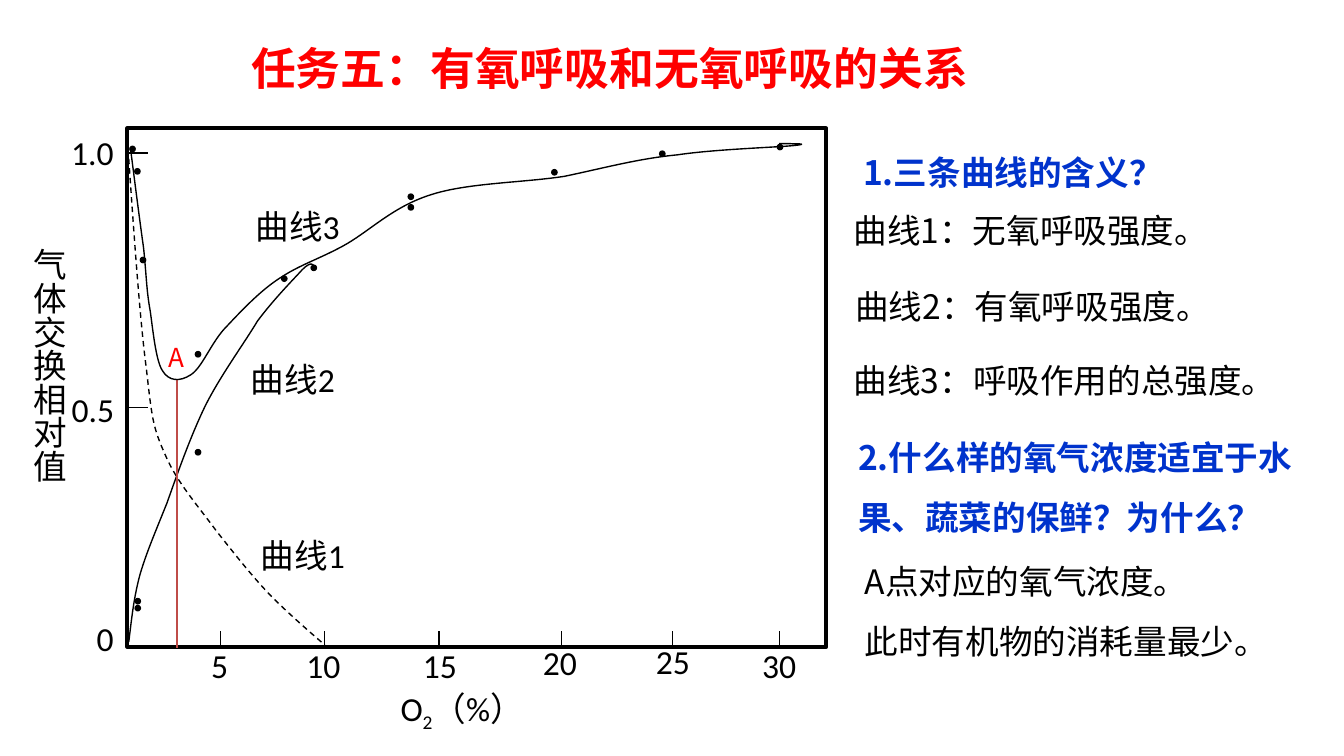
"""Build a slide on aerobic and anaerobic respiration against oxygen level."""
from lxml import etree
from pptx import Presentation
from pptx.dml.color import RGBColor
from pptx.enum import dml, shapes, text
from pptx.oxml.ns import qn
from pptx.util import Pt

BLACK = RGBColor(0, 0, 0)
RED = RGBColor(0xFF, 0, 0)
BLUE = RGBColor(0, 0x33, 0xCC)
MARKER = RGBColor(0xBF, 0x4C, 0x48)
LATIN, CJK = "Calibri", "Noto Sans CJK SC"

FRAME = (68.2, 68.8, 374.5, 277.8)
Y_TICKS = [82, 218.2]
Y_LABELS = [("1.0", 31, 67), ("0.5", 31.3, 205), ("0", 44.7, 327.5)]
X_AXIS = [("5", 118, 106, 342), ("10", 174, 157, 342), ("15", 235.2, 219.5, 342),
          ("20", 300.7, 283.7, 340.5), ("25", 360.2, 344.2, 340), ("30", 417.5, 401.2, 341.8)]
CURVE_LABELS = [("曲线1", 132.6, 283), ("曲线2", 127.2, 188.5), ("曲线3", 129.8, 106.5)]
DOTS = [(69.2, 78), (74.8, 137.5), (72, 320.3), (72, 324), (71.8, 90), (104.3, 240.5),
        (104.3, 188), (150.5, 147.5), (166.3, 141.7), (218.3, 109.3), (218.3, 103.6),
        (295.2, 90.5), (353, 80.6), (416, 77)]
ANAEROBIC = [
    (69, 85), (72, 128), (75, 171.5), (78.5, 198), (81.5, 224.5), (82, 229),
    (88.5, 243.5), (94.5, 258), (106.5, 271.5), (116, 284.5), (125.5, 296.5),
    (134.5, 308), (144, 318), (154, 328.5), (174, 345.5), (174, 345.5)]
AEROBIC = [
    (69, 344), (70.5, 332.5), (71.5, 321), (75, 308), (78.5, 296), (83.5, 284.5),
    (89.5, 269.5), (95, 254), (102, 234), (110, 217.5), (118, 201.5),
    (130.5, 184.5), (138, 172), (147, 160), (157, 150), (162, 144.5),
    (167, 139.5), (168, 142), (168.5, 143)]
TOTAL = [
    (70, 80), (72.5, 99.5), (75, 119), (77, 133), (78.5, 147.5), (78.5, 155.5),
    (80.5, 166.5), (82, 177), (83.5, 193), (87, 198.5), (90.5, 204.5),
    (96.5, 204.5), (102, 201), (108, 197.5), (112.5, 185), (120, 176.5),
    (128, 168), (139, 156), (150, 149), (160.5, 142), (170.5, 139),
    (183.5, 132), (197.5, 124.5), (210, 111), (230.5, 104.5), (250, 98),
    (280, 98), (302.5, 94.5), (324, 90), (342, 85), (363, 83), (383, 80),
    (416, 79), (425.5, 78), (435, 77), (426, 77), (417.5, 77)]
NOTES = [
    (["1.三条曲线的含义？"], 457.4, 69.6, 351.5, 34.5, BLUE),
    (["曲线1：无氧呼吸强度。"], 452.3, 98.9, 355, 38.2, BLACK),
    (["曲线2：有氧呼吸强度。"], 453.2, 139.6, 350, 38.2, BLACK),
    (["曲线3：呼吸作用的总强度。"], 452.4, 179.1, 388, 38.2, BLACK),
    (["2.什么样的氧气浓度适宜于水果、蔬菜的保鲜？为什么？"], 454.7, 220.2, 250.5, 70.5, BLUE),
    (["A点对应的氧气浓度。", "此时有机物的消耗量最少。"], 458.2, 286.8, 301, 70.5, BLACK)]


def add_text(s, lines, x, y, w, h, size=18, font=LATIN, color=BLACK, bold=False,
             inset=(7.2, 3.6), anchor=text.MSO_ANCHOR.TOP, spacing=1.0):
    """Add a text box with one paragraph per line and return its frame."""
    tf = s.shapes.add_textbox(Pt(x), Pt(y), Pt(w), Pt(h)).text_frame
    tf.word_wrap = True
    tf.auto_size = text.MSO_AUTO_SIZE.SHAPE_TO_FIT_TEXT
    tf.vertical_anchor = anchor
    tf.margin_left = tf.margin_right = Pt(inset[0])
    tf.margin_top = tf.margin_bottom = Pt(inset[1])
    tf.text = "\n".join(lines)
    for p in tf.paragraphs:
        p.line_spacing = spacing
        p.font.size, p.font.name, p.font.bold = Pt(size), font, bold
        p.font.color.rgb = color
    return tf


def add_line(s, x1, y1, x2, y2, color=BLACK, width=0.75):
    """Add a straight line without a shadow."""
    c = s.shapes.add_connector(shapes.MSO_CONNECTOR.STRAIGHT, Pt(x1), Pt(y1), Pt(x2), Pt(y2))
    c.line.color.rgb, c.line.width = color, Pt(width)
    etree.SubElement(c._element.spPr, qn("a:effectLst"))


def add_dot(s, x, y, size=3.6):
    """Add a black data point."""
    sp = s.shapes.add_shape(shapes.MSO_SHAPE.OVAL, Pt(x), Pt(y), Pt(size), Pt(size))
    sp.shadow.inherit = False
    sp.fill.solid()
    sp.fill.fore_color.rgb = BLACK
    sp.line.fill.background()


def add_curve(s, points, dash=None):
    """Add an open curve, each three points after the first making a cubic Bézier."""
    first, *rest = [(Pt(x), Pt(y)) for x, y in points]
    fb = s.shapes.build_freeform(*first)
    fb.add_line_segments(rest, close=False)
    sp = fb.convert_to_shape()
    segments = list(sp._element.iter(qn("a:lnTo")))
    for i in range(0, len(segments), 3):
        bez = etree.Element(qn("a:cubicBezTo"))
        segments[i].addprevious(bez)
        for seg in segments[i:i + 3]:
            bez.append(seg[0])
            seg.getparent().remove(seg)
    sp.shadow.inherit = False
    sp.fill.background()
    sp.line.color.rgb, sp.line.width = BLACK, Pt(0.75)
    if dash:
        sp.line.dash_style = dash


def add_axes(s):
    """Add the plot frame, ticks, tick labels and axis titles."""
    x, y, w, h = FRAME
    sp = s.shapes.add_shape(shapes.MSO_SHAPE.RECTANGLE, *map(Pt, FRAME))
    sp.shadow.inherit = False
    sp.fill.background()
    sp.line.color.rgb, sp.line.width = BLACK, Pt(2)
    for tick in Y_TICKS:
        add_line(s, x + 11, tick, x, tick)
    for label, left, top in Y_LABELS:
        add_text(s, [label], left, top, 54.5, 29)
    for label, tick, left, top in X_AXIS:
        add_line(s, tick, y + h, tick, y + h - 8.5)
        add_text(s, [label], left, top, 54.5, 29)
    tf = add_text(s, ["气体交换相对值"], 4.5, 126, 36, 187)
    tf._txBody.bodyPr.set("vert", "eaVert")
    p = add_text(s, ["O"], 207.5, 365, 107.5, 29).paragraphs[0]
    r = p.add_run()
    r.text = "2"
    r.font._element.set("baseline", "-25000")
    p.add_run().text = "（%）"


def main():
    """Build and save the slide."""
    prs = Presentation()
    prs.slide_width, prs.slide_height = Pt(720), Pt(405)
    s = prs.slides.add_slide(prs.slide_layouts[6])
    middle = text.MSO_ANCHOR.MIDDLE
    add_axes(s)
    add_curve(s, AEROBIC)
    add_curve(s, ANAEROBIC, dml.MSO_LINE.DASH)
    for label, x, y in CURVE_LABELS:
        add_text(s, [label], x, y, 116.5, 29)
    add_text(s, ["任务五：有氧呼吸和无氧呼吸的关系"], 134.5, 21.5, 654, 29, 24, CJK, RED, True,
             (0, 0), middle)
    for lines, x, y, w, h, color in NOTES:
        add_text(s, lines, x, y, w, h, 18, CJK, color, color == BLUE, (5, 2.9), middle, 1.5)
    for x, y in DOTS:
        add_dot(s, x, y)
    add_line(s, 94.8, 203, 94.8, 347, MARKER, 1.5)
    add_text(s, ["A"], 83, 179.5, 26, 24.5, 14, CJK, RED)
    add_curve(s, TOTAL)
    prs.save("out.pptx")


if __name__ == "__main__":
    main()
